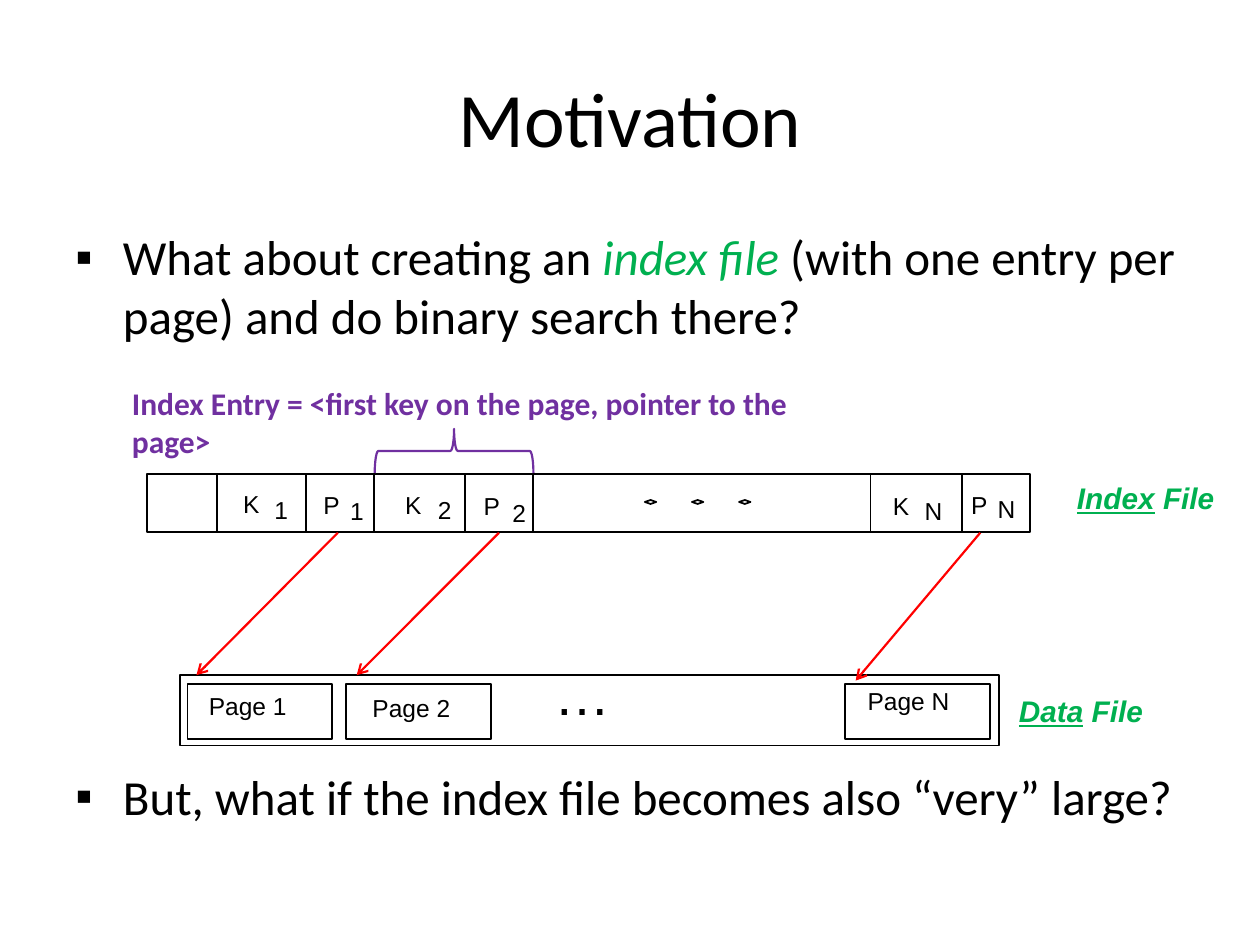
from lxml.etree import SubElement as Sub
from pptx import Presentation
from pptx.dml.color import RGBColor as RGB
from pptx.enum.shapes import MSO_CONNECTOR as Link, MSO_SHAPE as Kind
from pptx.enum.text import MSO_ANCHOR as Anchor, PP_ALIGN as Align
from pptx.oxml.ns import qn
from pptx.util import Cm, Pt

HUES = {"ink": "000000", "green": "00B050", "purple": "7030A0", "red": "FF0000"}


def hue(name):
    """Return the named colour."""
    return RGB.from_string(HUES[name])


def style(font, face, size, color="ink"):
    """Set the face, size and colour of a font."""
    font.name, font.size = face, Pt(size)
    font.color.rgb = hue(color)


def text(slide, box, parts, face="Arial", size=14, color="ink", wrap=False):
    """Add a text box with one paragraph made of the given parts."""
    shape = slide.shapes.add_textbox(*map(Cm, box))
    shape.text_frame.word_wrap = wrap
    para = shape.text_frame.paragraphs[0]
    for part in parts:
        para.add_run().text = part
    style(para.font, face, size, color)
    return shape


def outline(slide, kind, box, color="ink", width=1):
    """Add an unfilled preset shape."""
    shape = slide.shapes.add_shape(kind, *map(Cm, box))
    shape.shadow.inherit = False
    shape.fill.background()
    shape.line.color.rgb = hue(color)
    shape.line.width = Pt(width)
    return shape


def title(slide, box):
    """Place the centred slide title."""
    shape = text(slide, box, ["Motivation"], "Calibri", 44, wrap=True)
    shape.text_frame.vertical_anchor = Anchor.MIDDLE
    shape.text_frame.paragraphs[0].alignment = Align.CENTER


def body(slide, box):
    """Place the two bullets, with room for the diagram between them."""
    frame = slide.shapes.add_textbox(*map(Cm, box)).text_frame
    frame.word_wrap = True
    points = [
        (["What about creating an ", "index file ",
          "(with one entry per page) and do binary search there?"], 5.6),
        (["But, what if the index file becomes also “very” large?"], 241.2),
    ]
    for i, (parts, gap) in enumerate(points):
        para = frame.add_paragraph() if i else frame.paragraphs[0]
        para.space_before = Pt(gap)
        style(para.font, "Calibri", 28)
        for part in parts:
            para.add_run().text = part
        props = para._p.get_or_add_pPr()
        props.set("marL", str(Cm(0.96)))
        props.set("indent", str(-Cm(0.96)))
        face = Sub(props, qn("a:buFont"), typeface="Arial")
        mark = Sub(props, qn("a:buChar"), char="▪")
        for item in (face, mark):
            props.insert_element_before(item, "a:tabLst", "a:defRPr", "a:extLst")
    term = frame.paragraphs[0].runs[1].font
    term.italic = True
    term.color.rgb = hue("green")


def tag(slide, box, word):
    """Name a file, with its first word underlined."""
    shape = text(slide, box, [word, " File"], size=17, color="green")
    para = shape.text_frame.paragraphs[0]
    para.font.bold = para.font.italic = True
    para.runs[0].font.underline = True


def index(slide, box):
    """Draw the index file with its keys and pointers."""
    x, y, w, h = box
    outline(slide, Kind.RECTANGLE, box)
    for dx, wide in [(1.4, 1.8), (4.57, 1.84), (6.41, 1.37), (14.58, 1.84)]:
        outline(slide, Kind.RECTANGLE, (x + dx, y, wide, h))
    for i in range(3):
        outline(slide, Kind.DIAMOND, (x + 10.03 + 0.95 * i, y + 0.53, 0.23, 0.08))
    marks = [
        ("K", 1.68, 0.18), ("1", 2.31, 0.3), ("P", 3.3, 0.2), ("1", 3.84, 0.33),
        ("K", 4.95, 0.2), ("2", 5.61, 0.3), ("P", 6.53, 0.23), ("2", 7.11, 0.36),
        ("K", 14.78, 0.23), ("N", 15.42, 0.33), ("P", 16.36, 0.2), ("N", 16.89, 0.28),
    ]
    for mark, dx, dy in marks:
        text(slide, (x + dx, y + dy, 0.88, 0.86), [mark])
    tag(slide, (x + w + 0.69, y, 3.35, 0.99), "Index")


def data(slide, box):
    """Draw the data file with its pages."""
    x, y, w, h = box
    outline(slide, Kind.RECTANGLE, box)
    pages = [("1", 0.15, 0.33, 0.2), ("2", 3.35, 3.63, 0.23), ("N", 13.41, 13.61, 0.1)]
    for name, dx, tx, ty in pages:
        outline(slide, Kind.RECTANGLE, (x + dx, y + 0.18, 2.92, 1.11))
        text(slide, (x + tx, y + ty, 2.4, 0.86), [f"Page {name}"])
    text(slide, (x + 7.29, y - 0.43, 3.45, 1.63), ["…"], size=32, wrap=True)
    tag(slide, (x + w + 0.15, y + 0.23, 3.05, 0.99), "Data")


def links(slide, box):
    """Draw the arrows from the pointers down to the pages."""
    x, y, w, h = box
    for start, end, drop in [(2.85, 0, h), (6.1, 3.23, h), (w, 13.29, h + 0.11)]:
        ends = (x + start, y, x + end, y + drop)
        line = slide.shapes.add_connector(Link.STRAIGHT, *map(Cm, ends))
        line.line.color.rgb = hue("red")
        line.line.width = Pt(1.25)
        Sub(line._element.spPr.find(qn("a:ln")), qn("a:tailEnd"), type="arrow")
        Sub(line._element.spPr, qn("a:effectLst"))


def entry(slide, box):
    """Explain an index entry and brace the one it describes."""
    x, y, w, h = box
    note = ["Index Entry = <first key on the page, pointer to the page>"]
    shape = text(slide, box, note, "Calibri", 18, "purple", True)
    shape.text_frame.paragraphs[0].font.bold = True
    place = (x + 6.3, y - 0.13, 0.89, 3.2)
    outline(slide, Kind.RIGHT_BRACE, place, "purple", 1.25).rotation = 270


def main():
    """Build and save the slide."""
    deck = Presentation()
    deck.slide_width, deck.slide_height = Cm(25.4), Cm(19.05)
    slide = deck.slides.add_slide(deck.slide_layouts[6])
    title(slide, (1.27, 0.76, 22.86, 3.18))
    body(slide, (1.27, 4.45, 22.86, 13.97))
    data(slide, (3.63, 13.61, 16.51, 1.42))
    index(slide, (2.97, 9.55, 17.8, 1.17))
    links(slide, (3.96, 10.74, 15.8, 2.87))
    entry(slide, (2.41, 7.62, 15.1, 1.02))
    deck.save("out.pptx")


if __name__ == "__main__":
    main()
